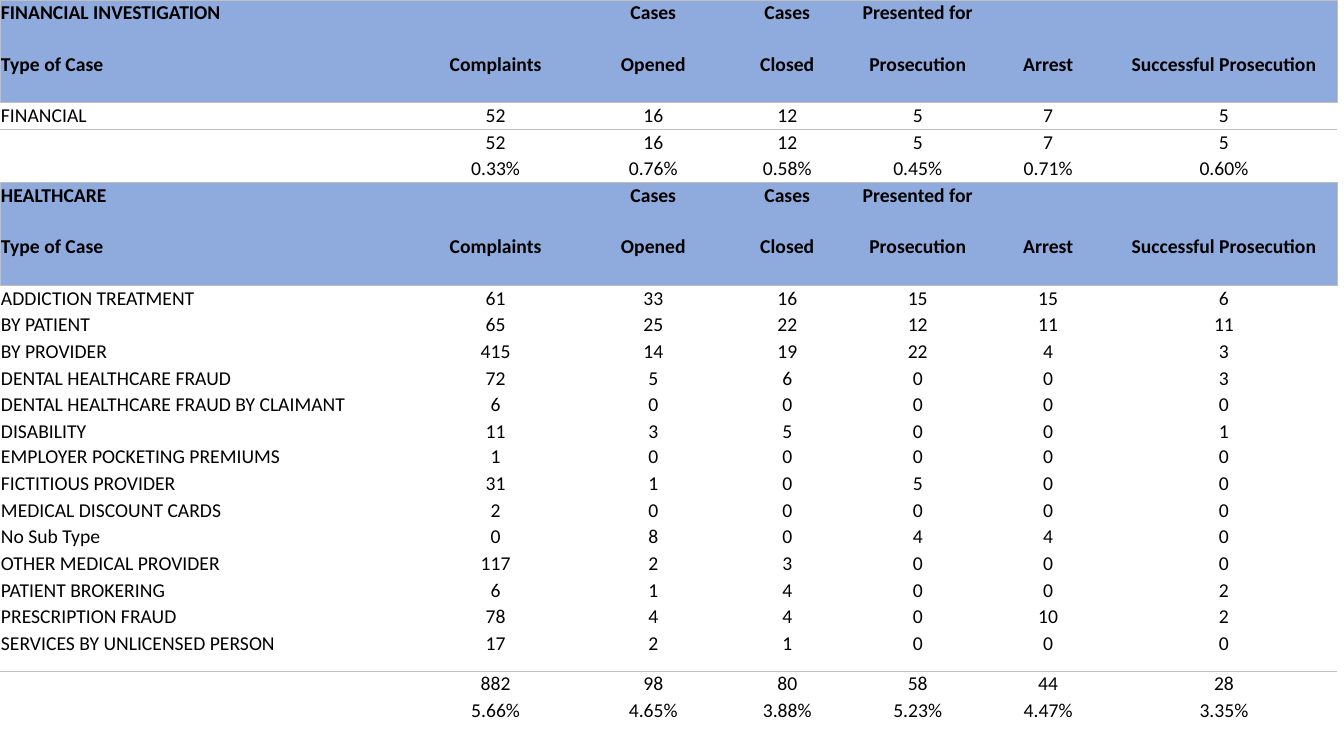
from dataclasses import dataclass
from lxml.etree import SubElement
from pptx import Presentation
from pptx.dml.color import RGBColor as RGB
from pptx.enum.text import PP_ALIGN as Align
from pptx.oxml.ns import qn
from pptx.util import Inches, Pt


@dataclass(frozen=True)
class Theme:
    font: str = "Calibri"
    size: float = 14
    ink: str = "000000"
    band: str = "8FAADC"
    rule: str = "C0C0C0"
    width: float = 0.5
    pad: float = 0.01


THEME = Theme()
COLS = [4.06, 1.72, 1.41, 1.25, 1.34, 1.25, 2.24]
HEAD, TIGHT, LAST = 0.51, 0.25, 0.4
TOP = ["", "Cases", "Cases", "Presented for", "", ""]
NAMES = ["Type of Case", "Complaints", "Opened", "Closed", "Prosecution",
         "Arrest", "Successful Prosecution"]

# Each section: title, case types, totals and shares
SECTIONS = [
    ("FINANCIAL INVESTIGATION",
     [["FINANCIAL", 52, 16, 12, 5, 7, 5]],
     [["", 52, 16, 12, 5, 7, 5],
      ["", "0.33%", "0.76%", "0.58%", "0.45%", "0.71%", "0.60%"]]),
    ("HEALTHCARE",
     [["ADDICTION TREATMENT", 61, 33, 16, 15, 15, 6],
      ["BY PATIENT", 65, 25, 22, 12, 11, 11],
      ["BY PROVIDER", 415, 14, 19, 22, 4, 3],
      ["DENTAL HEALTHCARE FRAUD", 72, 5, 6, 0, 0, 3],
      ["DENTAL HEALTHCARE FRAUD BY CLAIMANT", 6, 0, 0, 0, 0, 0],
      ["DISABILITY", 11, 3, 5, 0, 0, 1],
      ["EMPLOYER POCKETING PREMIUMS", 1, 0, 0, 0, 0, 0],
      ["FICTITIOUS PROVIDER", 31, 1, 0, 5, 0, 0],
      ["MEDICAL DISCOUNT CARDS", 2, 0, 0, 0, 0, 0],
      ["No Sub Type", 0, 8, 0, 4, 4, 0],
      ["OTHER MEDICAL PROVIDER", 117, 2, 3, 0, 0, 0],
      ["PATIENT BROKERING", 6, 1, 4, 0, 0, 2],
      ["PRESCRIPTION FRAUD", 78, 4, 4, 0, 10, 2],
      ["SERVICES BY UNLICENSED PERSON", 17, 2, 1, 0, 0, 0]],
     [["", 882, 98, 80, 58, 44, 28],
      ["", "5.66%", "4.65%", "3.88%", "5.23%", "4.47%", "3.35%"]]),
]


def layout():
    """Return all rows, the header row numbers and the ruled row edges."""
    rows, heads, edges = [], set(), set()
    for title, cases, sums in SECTIONS:
        start = len(rows)
        heads |= {start, start + 1}
        edges |= {start, start + 2, start + 2 + len(cases)}
        rows += [[title, *TOP], NAMES, *cases, *sums]
    return rows, heads, edges


def write(cell, text, bold=False, align=Align.LEFT):
    cell.margin_left = cell.margin_right = cell.margin_top = Inches(THEME.pad)
    cell.margin_bottom = 0
    para = cell.text_frame.paragraphs[0]
    para.alignment = align
    if text == "":
        # Keeps an empty cell from stretching its row
        SubElement(para._p, qn("a:endParaRPr"), sz=str(int(THEME.size * 100)))
        return
    run = para.add_run()
    run.text = str(text)
    font = run.font
    font.name, font.size, font.bold = THEME.font, Pt(THEME.size), bold
    font.color.rgb = RGB.from_string(THEME.ink)


def border(cell, sides):
    """Rule the given sides (letters of LRTB) and clear the others."""
    props = cell._tc.get_or_add_tcPr()
    for side in "LRTB":
        line = SubElement(props, qn(f"a:ln{side}"), w=str(Pt(THEME.width)))
        if side in sides:
            fill = SubElement(line, qn("a:solidFill"))
            SubElement(fill, qn("a:srgbClr"), val=THEME.rule)
        else:
            SubElement(line, qn("a:noFill"))


def cases(slide, left, top, width, height):
    rows, heads, edges = layout()
    table = slide.shapes.add_table(
        len(rows), len(COLS), Inches(left), Inches(top),
        Inches(width), Inches(height)).table
    table.first_row = table.horz_banding = False
    for col, size in zip(table.columns, COLS):
        col.width = Inches(size * width / sum(COLS))

    special = {row: HEAD for row in heads}
    special[[row[0] for row in rows].index("DISABILITY")] = TIGHT
    special[len(rows) - 3] = LAST
    body = (height - sum(special.values())) / (len(rows) - len(special))

    for r, row in enumerate(rows):
        head = r in heads
        table.rows[r].height = Inches(special.get(r, body))
        for c, text in enumerate(row):
            cell = table.cell(r, c)
            write(cell, text, bold=head,
                  align=Align.CENTER if c else Align.LEFT)
            sides = "T" * (r in edges) + "B" * (r + 1 in edges)
            if head:
                sides += "L" * (c == 0) + "R" * (c == len(COLS) - 1)
            border(cell, sides)
            if head:
                cell.fill.solid()
                cell.fill.fore_color.rgb = RGB.from_string(THEME.band)
            else:
                cell.fill.background()


def main():
    deck = Presentation()
    deck.slide_width, deck.slide_height = Inches(13.33), Inches(7.5)
    slide = deck.slides.add_slide(deck.slide_layouts[6])
    cases(slide, 0, 0, 13.26, 7.19)
    deck.save("out.pptx")


if __name__ == "__main__":
    main()
